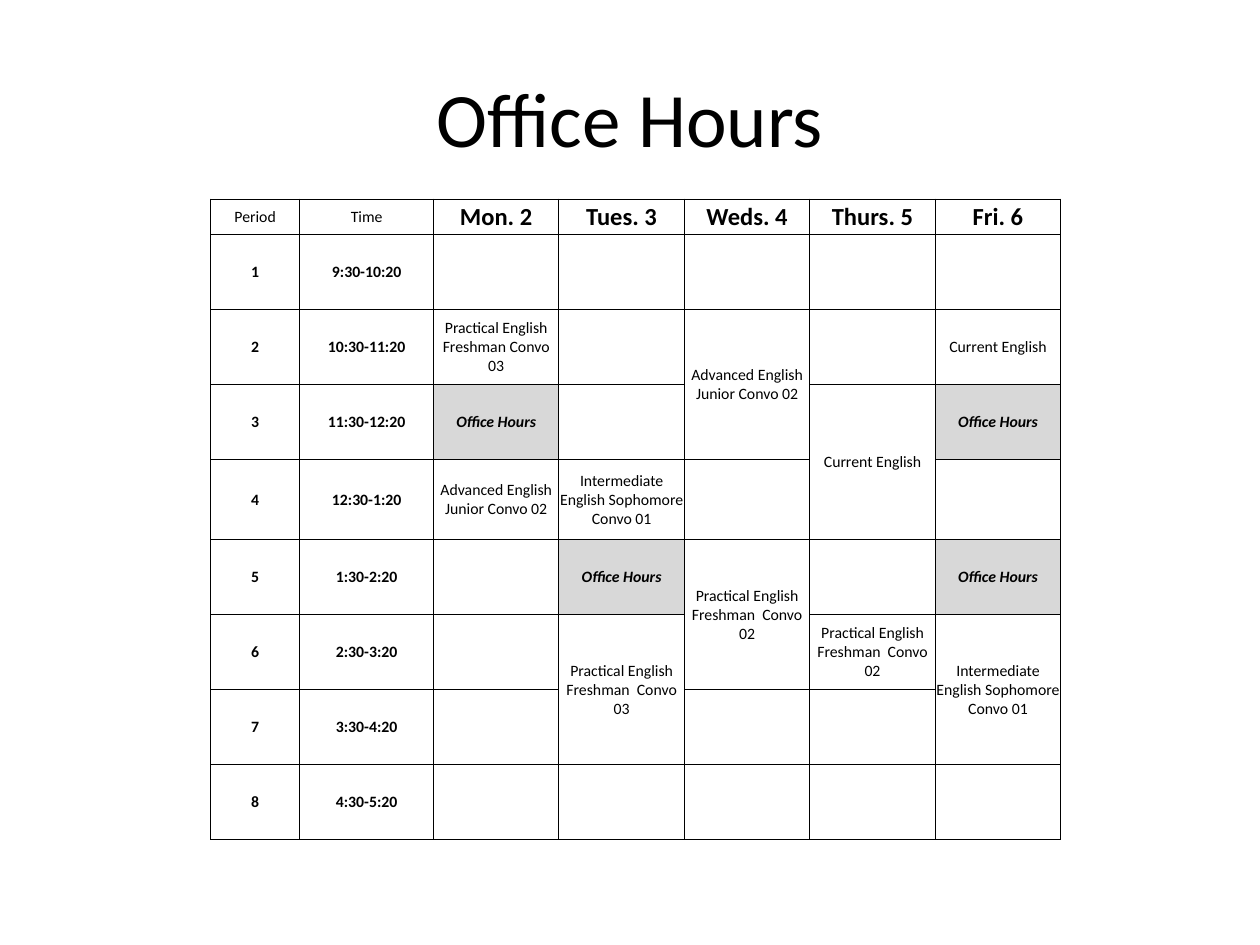
"""Build a weekly office hours timetable slide."""
from lxml import etree
from pptx import Presentation
from pptx.dml.color import RGBColor
from pptx.enum.text import MSO_ANCHOR, PP_ALIGN
from pptx.oxml.ns import qn
from pptx.util import Inches, Pt

MIDDLE = MSO_ANCHOR.MIDDLE
CENTER = PP_ALIGN.CENTER
FONT = "Calibri"
COLORS = {"text": "000000", "border": "000000", "office": "D8D8D8"}

TITLE = "Office Hours"
HEADERS = ["Period", "Time", "Mon. 2", "Tues. 3", "Weds. 4", "Thurs. 5", "Fri. 6"]
TIMES = ["9:30-10:20", "10:30-11:20", "11:30-12:20", "12:30-1:20",
         "1:30-2:20", "2:30-3:20", "3:30-4:20", "4:30-5:20"]
OFFICE = "Office Hours"
CURRENT = "Current English"
JUNIOR = "Advanced English Junior Convo 02"
SOPHOMORE = "Intermediate English Sophomore Convo 01"
FRESHMAN_02 = "Practical English Freshman  Convo 02"
FRESHMAN_03 = "Practical English Freshman  Convo 03"
CLASSES = {
    "Mon. 2": [(2, 1, "Practical English Freshman Convo 03"), (3, 1, OFFICE), (4, 1, JUNIOR)],
    "Tues. 3": [(4, 1, SOPHOMORE), (5, 1, OFFICE), (6, 2, FRESHMAN_03)],
    "Weds. 4": [(2, 2, JUNIOR), (5, 2, FRESHMAN_02)],
    "Thurs. 5": [(3, 2, CURRENT), (6, 1, FRESHMAN_02)],
    "Fri. 6": [(2, 1, CURRENT), (3, 1, OFFICE), (5, 1, OFFICE), (6, 2, SOPHOMORE)],
}

SLIDE_WIDTH, SLIDE_HEIGHT = 10, 7.5
TABLE_LEFT, TABLE_TOP, TABLE_WIDTH, TABLE_HEIGHT = 1.67, 1.58, 6.75, 5.08
LABEL_WIDTHS = [0.71, 1.06]
HEADER_HEIGHT, TALL_HEIGHT, TALL_PERIOD = 0.28, 0.64, 4
DAY_WIDTH = (TABLE_WIDTH - sum(LABEL_WIDTHS)) / len(CLASSES)
PERIOD_HEIGHT = (TABLE_HEIGHT - HEADER_HEIGHT - TALL_HEIGHT) / (len(TIMES) - 1)


def write(text_frame, text, size, bold=False, italic=False):
    text_frame.text = text
    paragraph = text_frame.paragraphs[0]
    paragraph.alignment = CENTER
    font = paragraph.runs[0].font
    font.name, font.size, font.bold, font.italic = FONT, Pt(size), bold, italic
    font.color.rgb = RGBColor.from_string(COLORS["text"])


def prepare_cell(cell):
    cell.vertical_anchor = MIDDLE
    cell.margin_left = cell.margin_right = cell.margin_top = Inches(0.01)
    cell.margin_bottom = 0
    properties = cell._tc.get_or_add_tcPr()
    for side in ("a:lnL", "a:lnR", "a:lnT", "a:lnB"):
        line = etree.SubElement(properties, qn(side), w=str(Pt(0.5)))
        fill = etree.SubElement(line, qn("a:solidFill"))
        etree.SubElement(fill, qn("a:srgbClr"), val=COLORS["border"])
    cell.fill.background()


def add_title(slide):
    box = slide.shapes.add_textbox(Inches(0.5), Inches(0.3), Inches(9), Inches(1.25))
    box.text_frame.word_wrap = True
    box.text_frame.vertical_anchor = MIDDLE
    write(box.text_frame, TITLE, 44)


def add_timetable(slide):
    table = slide.shapes.add_table(
        len(TIMES) + 1, len(HEADERS), Inches(TABLE_LEFT), Inches(TABLE_TOP),
        Inches(TABLE_WIDTH), Inches(TABLE_HEIGHT)).table
    table.first_row = table.horz_banding = False
    for column, width in zip(table.columns, LABEL_WIDTHS + [DAY_WIDTH] * len(CLASSES)):
        column.width = Inches(width)
    for period, row in enumerate(table.rows):
        row.height = Inches({0: HEADER_HEIGHT, TALL_PERIOD: TALL_HEIGHT}.get(period, PERIOD_HEIGHT))
    for cell in table.iter_cells():
        prepare_cell(cell)

    for column, header in enumerate(HEADERS):
        is_day = header in CLASSES
        write(table.cell(0, column).text_frame, header, 14 if is_day else 9, bold=is_day)
        for period, span, name in CLASSES.get(header, []):
            cell = table.cell(period, column)
            if span > 1:
                cell.merge(table.cell(period + span - 1, column))
            is_office = name == OFFICE
            write(cell.text_frame, name, 9, bold=is_office, italic=is_office)
            if is_office:
                cell.fill.solid()
                cell.fill.fore_color.rgb = RGBColor.from_string(COLORS["office"])
    for period, time in enumerate(TIMES, start=1):
        for column, label in enumerate((str(period), time)):
            write(table.cell(period, column).text_frame, label, 9, bold=True)


def main():
    presentation = Presentation()
    presentation.slide_width = Inches(SLIDE_WIDTH)
    presentation.slide_height = Inches(SLIDE_HEIGHT)
    slide = presentation.slides.add_slide(presentation.slide_layouts[6])
    add_title(slide)
    add_timetable(slide)
    presentation.save("out.pptx")


if __name__ == "__main__":
    main()
